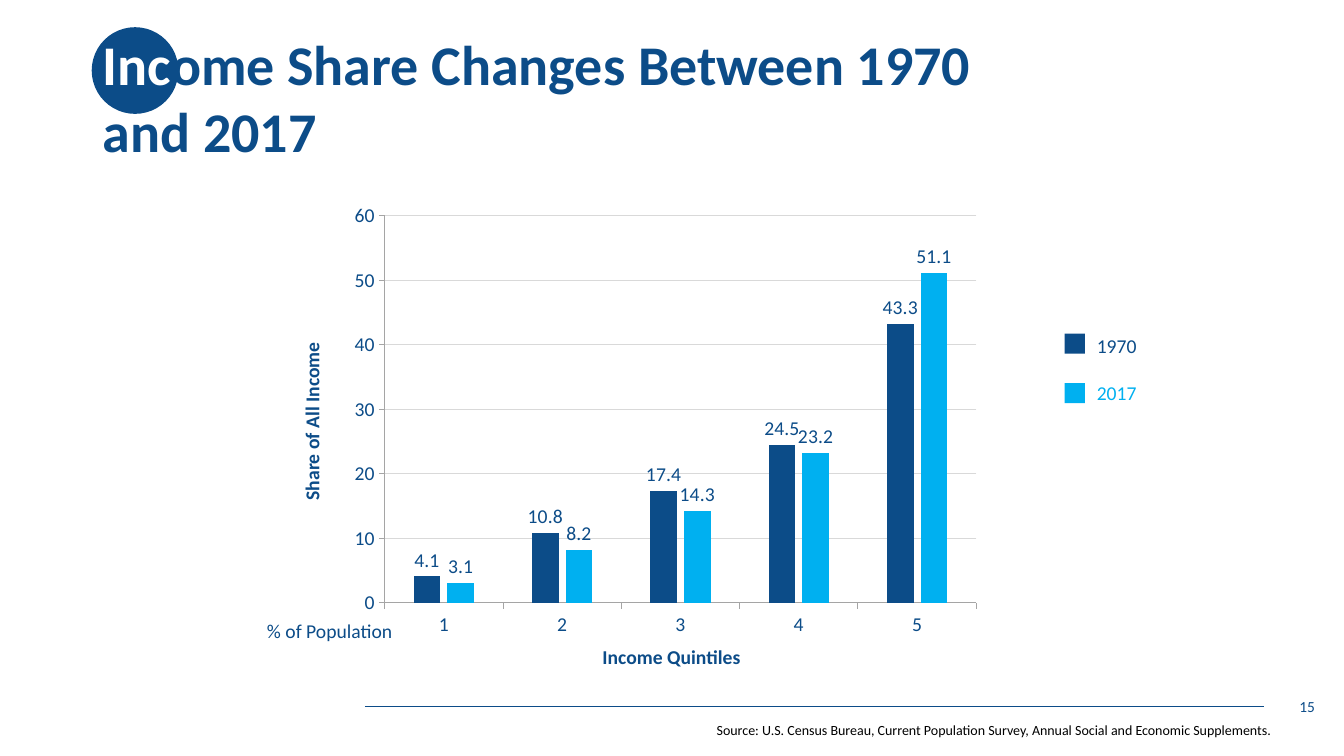
from lxml import etree
from pptx import Presentation
from pptx.chart.data import CategoryChartData
from pptx.dml.color import RGBColor
from pptx.enum import chart as ch, shapes as sh, text as tx
from pptx.oxml import parse_xml
from pptx.oxml.ns import nsdecls, qn
from pptx.util import Inches, Pt

NAVY = RGBColor(0x0C, 0x4C, 0x88)
SKY = RGBColor(0x00, 0xB0, 0xF0)
WHITE = RGBColor(0xFF, 0xFF, 0xFF)
BLACK = RGBColor(0, 0, 0)
AXIS_GREY = RGBColor(0xA5, 0xA5, 0xA5)
GRID_GREY = RGBColor(0xD9, 0xD9, 0xD9)

FONT = "Calibri"
QUINTILES = ["1", "2", "3", "4", "5"]
SHARES = [
    ("1970", NAVY, [4.1, 10.8, 17.4, 24.5, 43.3]),
    ("2017", SKY, [3.1, 8.2, 14.3, 23.2, 51.1]),
]


def style_font(font, size, color, bold=False):
    font.name, font.size, font.bold = FONT, Pt(size), bold
    font.color.rgb = color


def add_solid(slide, preset, color, left, top, size):
    solid = slide.shapes.add_shape(preset, Inches(left), Inches(top), Inches(size), Inches(size))
    solid.shadow.inherit = False
    solid.fill.solid()
    solid.fill.fore_color.rgb = color
    solid.line.fill.background()


def add_label(slide, box, lines, size=14, bold=False, align=tx.PP_ALIGN.LEFT,
              anchor=tx.MSO_ANCHOR.TOP, wrap=False, gap=0, rotation=0):
    """Place (text, color) lines in a box, with gap points between them."""
    label = slide.shapes.add_textbox(*map(Inches, box))
    label.rotation = rotation
    frame = label.text_frame
    frame.word_wrap = wrap
    frame.vertical_anchor = anchor
    for index, (words, color) in enumerate(lines):
        paragraph = frame.add_paragraph() if index else frame.paragraphs[0]
        paragraph.text = words
        paragraph.alignment = align
        if index:
            paragraph.space_before = Pt(gap)
        style_font(paragraph.font, size, color, bold)


def add_heading(slide, left, top, width, height):
    # Disc behind the first letters
    add_solid(slide, sh.MSO_SHAPE.OVAL, NAVY, left - 0.01, top + 0.03, 0.86)
    title = slide.shapes.title
    title.left, title.top, title.width, title.height = map(Inches, (left, top, width, height))
    slide.shapes.element.append(title.element)  # bring in front of the disc
    frame = title.text_frame
    frame.auto_size = tx.MSO_AUTO_SIZE.NONE
    frame.word_wrap = True
    frame.vertical_anchor = tx.MSO_ANCHOR.TOP
    paragraph = frame.paragraphs[0]
    paragraph.alignment = tx.PP_ALIGN.LEFT
    style_font(paragraph.font, 40, NAVY, True)
    on_disc = paragraph.add_run()
    on_disc.text = "Inc"
    on_disc.font.color.rgb = WHITE
    paragraph.add_run().text = "ome Share Changes Between 1970 "
    paragraph.add_line_break()
    paragraph.add_run().text = "and 2017"


def style_axis(axis):
    axis.major_tick_mark = ch.XL_TICK_MARK.OUTSIDE
    axis.minor_tick_mark = ch.XL_TICK_MARK.NONE
    axis.format.line.color.rgb = AXIS_GREY
    axis.format.line.width = Pt(0.75)
    style_font(axis.tick_labels.font, 14, NAVY)


def set_plot_area(chart, x, y, w, h):
    plot_area = chart.element.find(".//" + qn("c:plotArea"))
    for layout in plot_area.findall(qn("c:layout")):
        plot_area.remove(layout)
    layout = parse_xml(f"<c:layout {nsdecls('c')}><c:manualLayout/></c:layout>")
    settings = [("layoutTarget", "inner"), ("xMode", "edge"), ("yMode", "edge"),
                ("x", x), ("y", y), ("w", w), ("h", h)]
    for tag, value in settings:
        etree.SubElement(layout[0], qn("c:" + tag)).set("val", str(value))
    plot_area.insert(0, layout)


def add_income_chart(slide, left, top, width, height):
    shares = CategoryChartData(number_format="0.0")
    shares.categories = QUINTILES
    for year, _, values in SHARES:
        shares.add_series(year, values)
    chart = slide.shapes.add_chart(ch.XL_CHART_TYPE.COLUMN_CLUSTERED,
                                   *map(Inches, (left, top, width, height)), shares).chart
    chart.has_legend = chart.has_title = False
    style_font(chart.font, 10, BLACK)
    set_plot_area(chart, 0.061, 0.045, 0.904, 0.857)

    # Axes
    share_axis = chart.value_axis
    for axis in (chart.category_axis, share_axis):
        style_axis(axis)
    share_axis.minimum_scale, share_axis.maximum_scale, share_axis.major_unit = 0, 60, 10
    share_axis.tick_labels.number_format = "0"
    share_axis.tick_labels.number_format_is_linked = False
    share_axis.major_gridlines.format.line.color.rgb = GRID_GREY
    share_axis.major_gridlines.format.line.width = Pt(0.75)

    # Columns and their values
    columns = chart.plots[0]
    columns.vary_by_categories = False
    columns.gap_width, columns.overlap = 219, -27
    for series, (_, color, _) in zip(columns.series, SHARES):
        series.format.fill.solid()
        series.format.fill.fore_color.rgb = color
        labels = series.data_labels
        labels.show_value = True
        labels.position = ch.XL_LABEL_POSITION.OUTSIDE_END
        style_font(labels.font, 14, NAVY)

    # Axis captions
    caption = dict(bold=True, align=tx.PP_ALIGN.CENTER, anchor=tx.MSO_ANCHOR.MIDDLE, wrap=True)
    add_label(slide, (left + 1.02, top + height - 0.1, 4.44, 0.38),
              [("Income Quintiles", NAVY)], **caption)
    add_label(slide, (left - 1.25, top + 2.05, 1.84, 0.38),
              [("Share of All Income", NAVY)], rotation=270, **caption)
    add_label(slide, (left - 0.87, top + height - 0.33, 1.46, 0.34), [("% of Population", NAVY)])


def add_legend(slide, left, top, width, height):
    for row, (_, color, _) in enumerate(SHARES):
        add_solid(slide, sh.MSO_SHAPE.RECTANGLE, color, left, top + 0.05 + row * 0.49, 0.2)
    add_label(slide, (left + 0.22, top, width - 0.22, height),
              [(year, color) for year, color, _ in SHARES], gap=17)


def add_footer(slide, left, top, width):
    y = Inches(top)
    rule = slide.shapes.add_connector(sh.MSO_CONNECTOR.STRAIGHT,
                                      Inches(left), y, Inches(left + width), y)
    rule.line.color.rgb = NAVY
    rule.line.width = Pt(0.5)
    etree.SubElement(rule.element.spPr, qn("a:effectLst"))
    add_label(slide, (left + 6.52, top - 0.2, 3, 0.4), [("15", NAVY)], size=11,
              align=tx.PP_ALIGN.RIGHT, anchor=tx.MSO_ANCHOR.MIDDLE, wrap=True)
    add_label(slide, (left + 3.39, top + 0.1, 5.8, 0.27),
              [("Source: U.S. Census Bureau, Current Population Survey, "
                "Annual Social and Economic Supplements.", BLACK)], size=10)


def main():
    deck = Presentation()
    deck.slide_width, deck.slide_height = Inches(13.33), Inches(7.5)
    slide = deck.slides.add_slide(deck.slide_layouts.get_by_name("Title Only"))
    add_heading(slide, 0.92, 0.24, 11.5, 1.45)
    add_income_chart(slide, 3.42, 1.94, 6.49, 4.48)
    add_legend(slide, 10.56, 3.26, 0.82, 0.81)
    add_footer(slide, 3.62, 7.01, 8.92)
    deck.save("out.pptx")


if __name__ == "__main__":
    main()
